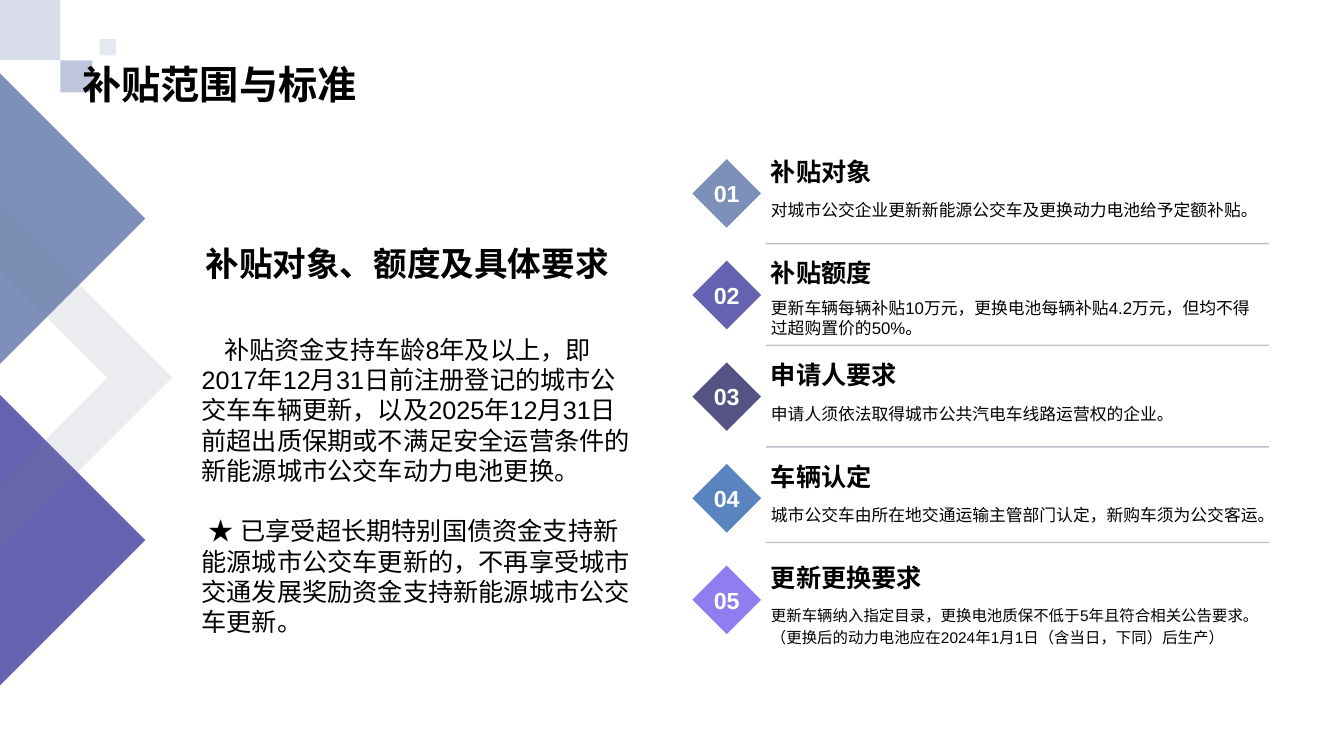
from collections import namedtuple

from lxml.etree import SubElement
from pptx import Presentation
from pptx.dml.color import RGBColor
from pptx.enum.lang import MSO_LANGUAGE_ID
from pptx.enum.shapes import MSO_CONNECTOR, MSO_SHAPE
from pptx.enum.text import MSO_ANCHOR, PP_ALIGN
from pptx.oxml.ns import qn
from pptx.util import Cm, Pt

Box = namedtuple("Box", "left top width height")

FONT = "Arial"
COLORS = {
    "steel": "7E8FB9",
    "violet": "6562B1",
    "indigo": "545383",
    "blue": "5984BF",
    "lilac": "8E7EF0",
    "gray": "778495",
    "black": "000000",
    "white": "FFFFFF",
}
CORNER_SQUARES = [(0, 0, 1.52, 30), (1.52, 1.52, 0.81, 50), (2.51, 0.99, 0.41, 20)]
ROW_STEP = 2.56
REQUIREMENTS = [
    ("补贴对象", "对城市公交企业更新新能源公交车及更换动力电池给予定额补贴。",
     "steel", 12, 1.2, 2.57),
    ("补贴额度", "更新车辆每辆补贴10万元，更换电池每辆补贴4.2万元，但均不得过超购置价的50%。",
     "violet", 12, 1.0, 2.57),
    ("申请人要求", "申请人须依法取得城市公共汽电车线路运营权的企业。",
     "indigo", 12, 1.2, 2.57),
    ("车辆认定", "城市公交车由所在地交通运输主管部门认定，新购车须为公交客运。",
     "blue", 12, 1.2, 2.42),
    ("更新更换要求", "更新车辆纳入指定目录，更换电池质保不低于5年且符合相关公告要求。"
     "（更换后的动力电池应在2024年1月1日（含当日，下同）后生产）",
     "lilac", 11, 1.2, None),
]
SUMMARY_TITLE = "补贴对象、额度及具体要求"
SUMMARY = [
    ("补贴资金支持车龄8年及以上，即2017年12月31日前注册登记的城市公交车车辆更新，"
     "以及2025年12月31日前超出质保期或不满足安全运营条件的新能源城市公交车动力电池更换。",
     0.57, 0),
    ("★ 已享受超长期特别国债资金支持新能源城市公交车更新的，"
     "不再享受城市交通发展奖励资金支持新能源城市公交车更新。", 0.17, 21.6),
]


def rgb(name):
    """Return the named colour."""
    return RGBColor.from_string(COLORS[name])


def set_opacity(fill, percent):
    """Make a solid fill element partly transparent."""
    SubElement(fill[0], qn("a:alpha"), val=str(percent * 1000))


def paint(shape, color, opacity=100):
    """Give a shape a flat fill without outline or shadow."""
    shape.shadow.inherit = False
    shape.fill.solid()
    shape.fill.fore_color.rgb = rgb(color)
    shape.line.fill.background()
    if opacity < 100:
        set_opacity(shape.element.spPr.find(qn("a:solidFill")), opacity)


def write(paragraph, text, size=18, color="black", bold=False, align=None,
          spacing=None, before=0, indent=0):
    """Write formatted text into a paragraph."""
    paragraph.alignment = align
    paragraph.line_spacing = spacing
    paragraph.space_before = Pt(before)
    if indent:
        paragraph._p.get_or_add_pPr().set("indent", str(Cm(indent)))
    run = paragraph.add_run()
    run.text = text
    font = run.font
    font.name, font.size, font.bold = FONT, Pt(size), bold
    font.color.rgb = rgb(color)
    font.language_id = MSO_LANGUAGE_ID.SIMPLIFIED_CHINESE
    SubElement(run._r.get_or_add_rPr(), qn("a:ea"), typeface=FONT)


def add_text_frame(slide, box, anchor=MSO_ANCHOR.TOP):
    """Add a wrapping text box and return its text frame."""
    frame = slide.shapes.add_textbox(*map(Cm, box)).text_frame
    frame.word_wrap = True
    frame.vertical_anchor = anchor
    return frame


def add_text(slide, box, text, anchor=MSO_ANCHOR.TOP, **text_format):
    """Add a text box with one paragraph."""
    write(add_text_frame(slide, box, anchor).paragraphs[0], text, **text_format)


def add_wedge(slide, box, color, opacity=100, thickness=None):
    """Add a right-pointing triangle, or a chevron of the given thickness."""
    left, top, width, height = box
    middle = top + height / 2
    points = [(left, top), (left + width, middle), (left, top + height)]
    if thickness:
        points += [(left, top + height - thickness),
                   (left + width - thickness, middle), (left, top + thickness)]
    points = [(Cm(x), Cm(y)) for x, y in points]
    builder = slide.shapes.build_freeform(*points[0])
    builder.add_line_segments(points[1:])
    paint(builder.convert_to_shape(), color, opacity)


def add_header(slide, box):
    """Place the corner squares and the slide title."""
    for left, top, side, opacity in CORNER_SQUARES:
        square = slide.shapes.add_shape(
            MSO_SHAPE.RECTANGLE, Cm(box.left + left), Cm(box.top + top), Cm(side), Cm(side))
        paint(square, "steel", opacity)
    title_box = Box(box.left + 1.83, box.top + 0.36, box.width - 3.69, box.height - 0.36)
    add_text(slide, title_box, "补贴范围与标准", MSO_ANCHOR.BOTTOM, size=28, bold=True)


def add_edge_ornament(slide, box):
    """Place the two triangles and the chevron on the left edge."""
    side = 7.32
    reach = side / 2
    add_wedge(slide, Box(box.left, box.top + box.height - side, reach, side), "violet")
    add_wedge(slide, Box(box.left, box.top, reach, side), "steel")
    add_wedge(slide, Box(box.left, box.top + 3.33, box.width, 2 * box.width),
              "gray", 15, thickness=1.63)


def add_summary(slide, box):
    """Place the summary heading and its paragraphs."""
    add_text(slide, Box(box.left + 0.1, box.top, box.width - 0.08, 5.23), SUMMARY_TITLE,
             MSO_ANCHOR.MIDDLE, size=24, bold=True)
    frame = add_text_frame(slide, Box(box.left, box.top + 4.29, box.width, box.height - 4.29))
    for number, (text, indent, before) in enumerate(SUMMARY):
        paragraph = frame.add_paragraph() if number else frame.paragraphs[0]
        write(paragraph, text, indent=indent, before=before)


def add_divider(slide, left, right, y):
    """Add a thin half-transparent horizontal line."""
    line = slide.shapes.add_connector(
        MSO_CONNECTOR.STRAIGHT, Cm(left), Cm(y), Cm(right), Cm(y))
    line.line.width = Pt(1)
    line.line.color.rgb = rgb("gray")
    properties = line.element.spPr
    set_opacity(properties.find(qn("a:ln")).find(qn("a:solidFill")), 50)
    SubElement(properties, qn("a:effectLst"))


def add_requirement(slide, box, number, requirement):
    """Place one numbered requirement with its divider."""
    heading, detail, color, size, spacing, divider = requirement
    marker = slide.shapes.add_shape(
        MSO_SHAPE.DIAMOND, Cm(box.left), Cm(box.top + 0.44), Cm(1.73), Cm(1.73))
    paint(marker, color)
    marker.text_frame.word_wrap = False
    marker.text_frame.vertical_anchor = MSO_ANCHOR.MIDDLE
    write(marker.text_frame.paragraphs[0], f"{number:02}", size=16.6, color="white",
          bold=True, align=PP_ALIGN.CENTER)
    left, width = box.left + 1.73, box.width - 1.73
    add_text(slide, Box(left, box.top, width, 1.25), heading, MSO_ANCHOR.BOTTOM, bold=True)
    add_text(slide, Box(left, box.top + 1.25, width, box.height - 1.25), detail,
             size=size, spacing=spacing)
    if divider:
        add_divider(slide, left + 0.12, left + width, box.top + divider)


def add_requirements(slide, box):
    """Stack the numbered requirements at equal steps."""
    for index, requirement in enumerate(REQUIREMENTS):
        row = Box(box.left, box.top + index * ROW_STEP, box.width, ROW_STEP)
        add_requirement(slide, row, index + 1, requirement)


def main():
    """Build and save the presentation."""
    presentation = Presentation()
    presentation.slide_width, presentation.slide_height = Cm(33.87), Cm(19.05)
    slide = presentation.slides.add_slide(presentation.slide_layouts[6])
    add_header(slide, Box(0, 0, 33.87, 2.84))
    add_edge_ornament(slide, Box(0, 1.85, 4.34, 15.42))
    add_summary(slide, Box(4.83, 4.01, 11.33, 12.24))
    add_requirements(slide, Box(17.45, 3.57, 14.53, 5 * ROW_STEP))
    presentation.save("out.pptx")


if __name__ == "__main__":
    main()
